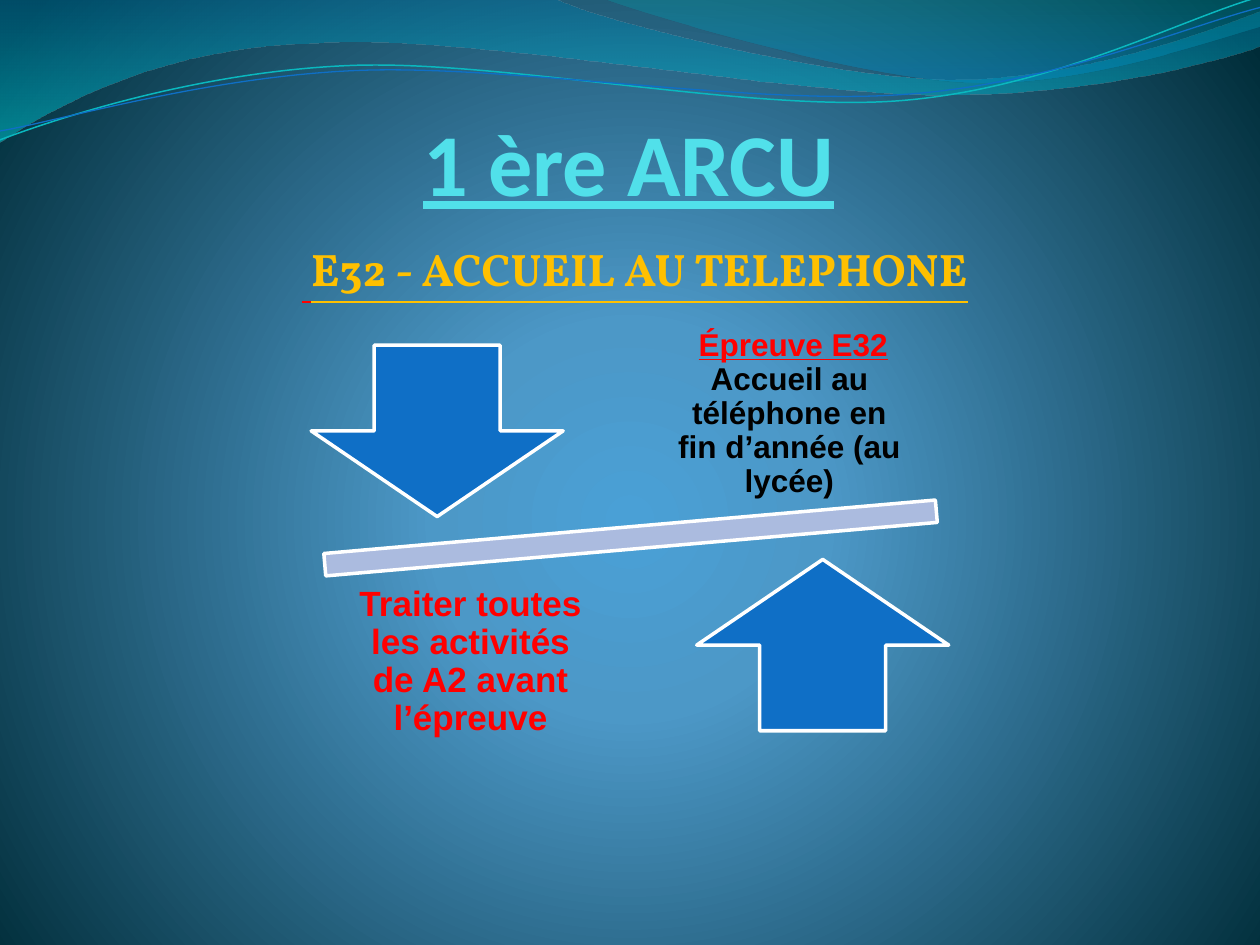
"""Build the slide on the telephone reception exam."""
from dataclasses import dataclass
from math import cos, radians, sin

from lxml import etree
from pptx import Presentation
from pptx.dml.color import RGBColor
from pptx.enum.shapes import MSO_SHAPE
from pptx.enum.text import MSO_ANCHOR, PP_ALIGN
from pptx.oxml.ns import qn
from pptx.util import Inches, Pt

DOWN, UP, MINUS = MSO_SHAPE.DOWN_ARROW, MSO_SHAPE.UP_ARROW, MSO_SHAPE.MATH_MINUS
TOP, MIDDLE, BOTTOM = MSO_ANCHOR.TOP, MSO_ANCHOR.MIDDLE, MSO_ANCHOR.BOTTOM
CENTER = PP_ALIGN.CENTER
TILT = 357.3


@dataclass(frozen=True)
class Theme:
    """Hold the colours, fonts and type sizes."""
    blue: str = "0F6FC6"
    aqua: str = "0AB8BF"
    bar: str = "ABBBDF"
    white: str = "FFFFFF"
    black: str = "000000"
    red: str = "FF0000"
    gold: str = "FFC000"
    cyan: str = "51E0EA"
    head: str = "Calibri"
    serif: str = "Vollkorn"
    body: str = "Arial"
    big: float = 50.4
    sub: float = 26
    large: float = 20
    mid: float = 18
    small: float = 16
    back: tuple = ((0, "4AA0D6", 100), (25, "4C98C7", 100), (100, "002C38", 100))
    wave: tuple = ((0, "0074A1", 45), (100, "00C6CF", 55))
    crest: tuple = ((0, "00A1A9", 30), (80, "008BBF", 45))


THEME = Theme()

WAVE = [(0, 0), (4.4, -0.01),
        (4.76, 0.17, 6.64, 0.63, 7.58, 0.63), (8.53, 0.63, 9.58, 0.26, 10, 0.09),
        (10.01, 0.36),
        (9.83, 0.44, 8.7, 0.76, 7.46, 0.75), (6.22, 0.75, 3.82, 0.28, 2.57, 0.34),
        (1.29, 0.36, 0.46, 0.83, -0.01, 1.13), (0, 0)]
CREST = [(4.79, -0.01),
         (5.09, 0.11, 6.82, 0.62, 7.69, 0.65), (8.56, 0.69, 9.61, 0.32, 10, 0.21),
         (10, 0), (4.79, -0.01)]
UPPER = [(0, 1.11),
         (0.48, 0.93, 1.58, 0.57, 2.77, 0.52), (3.95, 0.47, 5.93, 0.89, 7.13, 0.8),
         (8.33, 0.71, 9.38, 0.15, 9.98, -0.02)]
LOWER = [(0, 1.04),
         (0.47, 0.96, 1.64, 0.61, 2.83, 0.56), (4.03, 0.51, 5.97, 0.84, 7.17, 0.75),
         (8.36, 0.67, 9.41, 0.21, 10, 0.06)]


def add_node(parent, tag, **attrs):
    """Add an XML child with the given attributes."""
    return etree.SubElement(parent, qn(tag), {k: str(v) for k, v in attrs.items()})


def set_blend(holder, stops, focus=None):
    """Swap the solid fill of a holder for a linear or round gradient."""
    solid = holder.find(qn("a:solidFill"))
    blend = etree.Element(qn("a:gradFill"), rotWithShape="1")
    items = add_node(blend, "a:gsLst")
    for spot, tint, alpha in stops:
        stop = add_node(items, "a:gs", pos=spot * 1000)
        color = add_node(stop, "a:srgbClr", val=tint)
        if alpha < 100:
            add_node(color, "a:alpha", val=alpha * 1000)
    if focus:
        ring = add_node(blend, "a:path", path="circle")
        sides = {k: v * 1000 for k, v in zip("ltrb", focus)}
        add_node(ring, "a:fillToRect", **sides)
    else:
        add_node(blend, "a:lin", ang=90 * 60000, scaled=1)
    holder.replace(solid, blend)


def untilt(point, mid):
    """Turn a point back around the middle of a tilted shape."""
    turn = radians(-TILT)
    dx, dy = point[0] - mid[0], point[1] - mid[1]
    return (mid[0] + dx * cos(turn) - dy * sin(turn),
            mid[1] + dx * sin(turn) + dy * cos(turn))


def bend(shape, parts):
    """Join each three line steps of a curved part into one cubic step."""
    track = next(shape.element.iter(qn("a:path")))
    steps = iter(track.findall(qn("a:lnTo")))
    for part in parts:
        group = [next(steps) for _ in range(len(part) // 2)]
        if len(group) == 3:
            cubic = etree.Element(qn("a:cubicBezTo"))
            group[0].addprevious(cubic)
            for step in group:
                cubic.append(step[0])
                track.remove(step)


def add_curve(slide, parts, mid=None):
    """Add an outline of lines and cubic curves, tilted around mid if given."""
    points = [part[i:i + 2] for part in parts for i in range(0, len(part), 2)]
    if mid:
        points = [untilt(point, mid) for point in points]
    spots = [(Inches(x), Inches(y)) for x, y in points]
    pen = slide.shapes.build_freeform(*spots[0])
    pen.add_line_segments(spots[1:], close=not mid)
    shape = pen.convert_to_shape()
    shape.shadow.inherit = False
    bend(shape, parts[1:])
    return shape


def add_wave(slide, parts, stops):
    """Add a wave with a gradient fill."""
    shape = add_curve(slide, parts)
    shape.fill.solid()
    set_blend(shape.element.spPr, stops)
    shape.line.fill.background()


def add_thread(slide, parts, mid, tint, width):
    """Add a thin open curve."""
    shape = add_curve(slide, parts, mid)
    shape.rotation = TILT
    shape.fill.background()
    shape.line.color.rgb = RGBColor.from_string(tint)
    shape.line.width = Pt(width)


def add_form(slide, kind, box, fill, turn=0):
    """Add a preset shape with a white outline."""
    shape = slide.shapes.add_shape(kind, *map(Inches, box))
    shape.shadow.inherit = False
    shape.rotation = turn
    shape.fill.solid()
    shape.fill.fore_color.rgb = RGBColor.from_string(fill)
    shape.line.color.rgb = RGBColor.from_string(THEME.white)
    shape.line.width = Pt(2)


def add_text(slide, box, runs, anchor, pads, **spacing):
    """Add a centred paragraph of styled runs."""
    frame = slide.shapes.add_textbox(*map(Inches, box)).text_frame
    left, top, right, base = map(Inches, pads)
    look = dict(word_wrap=True, vertical_anchor=anchor, margin_left=left,
                margin_top=top, margin_right=right, margin_bottom=base)
    for key, value in look.items():
        setattr(frame, key, value)
    para = frame.paragraphs[0]
    for key, value in dict(alignment=CENTER, **spacing).items():
        setattr(para, key, value)
    for text, tint, form in runs:
        run = para.add_run()
        run.text = text
        run.font.color.rgb = RGBColor.from_string(tint)
        for key, value in form.items():
            setattr(run.font, key, value)


def style(name, size, bold=True, underline=False):
    """Give the format values of a run."""
    return dict(name=name, size=Pt(size), bold=bold, underline=underline)


def main():
    """Build and save the slide."""
    deck = Presentation()
    deck.slide_width, deck.slide_height = Inches(10), Inches(7.5)
    slide = deck.slides.add_slide(deck.slide_layouts[6])
    slide.background.fill.solid()
    set_blend(next(slide.element.iter(qn("p:bgPr"))), THEME.back, (10, 110, 10, 100))

    add_wave(slide, WAVE, THEME.wave)
    add_wave(slide, CREST, THEME.crest)
    add_thread(slide, UPPER, (4.99, 0.57), THEME.aqua, 0.85)
    add_thread(slide, LOWER, (5, 0.59), THEME.blue, 0.75)

    add_text(slide, (0.75, 0.91, 8.5, 0.79),
             [("1 ère ARCU", THEME.cyan, style(THEME.head, THEME.big, underline=True))],
             BOTTOM, (0, 0, 0.02, 0))
    add_text(slide, (0.98, 1.86, 8.19, 4.31),
             [(" ", THEME.red, style(THEME.serif, THEME.sub, False, True)),
              ("E32 - ACCUEIL AU TELEPHONE", THEME.gold,
               style(THEME.serif, THEME.sub, underline=True))],
             TOP, (0, 0.05, 0.07, 0.05), space_before=Pt(5))

    add_form(slide, MINUS, (1.69, 3.89, 6.63, 0.76), THEME.bar, 355)
    add_form(slide, DOWN, (2.47, 2.74, 2, 1.36), THEME.blue)
    add_form(slide, UP, (5.53, 4.44, 2, 1.36), THEME.blue)

    add_text(slide, (5.2, 2.57, 2.13, 1.43),
             [(" ", THEME.red, style(THEME.body, THEME.small, False)),
              ("Épreuve E32 ", THEME.red, style(THEME.body, THEME.mid, underline=True)),
              ("Accueil au téléphone en fin d’année (au lycée)", THEME.black,
               style(THEME.body, THEME.mid))],
             MIDDLE, [0.12] * 4, line_spacing=0.9)
    add_text(slide, (2.67, 4.54, 2.13, 1.43),
             [("Traiter toutes les activités de A2 avant l’épreuve", THEME.red,
               style(THEME.body, THEME.large))],
             MIDDLE, [0.16] * 4, line_spacing=0.9)
    deck.save("out.pptx")


if __name__ == "__main__":
    main()
